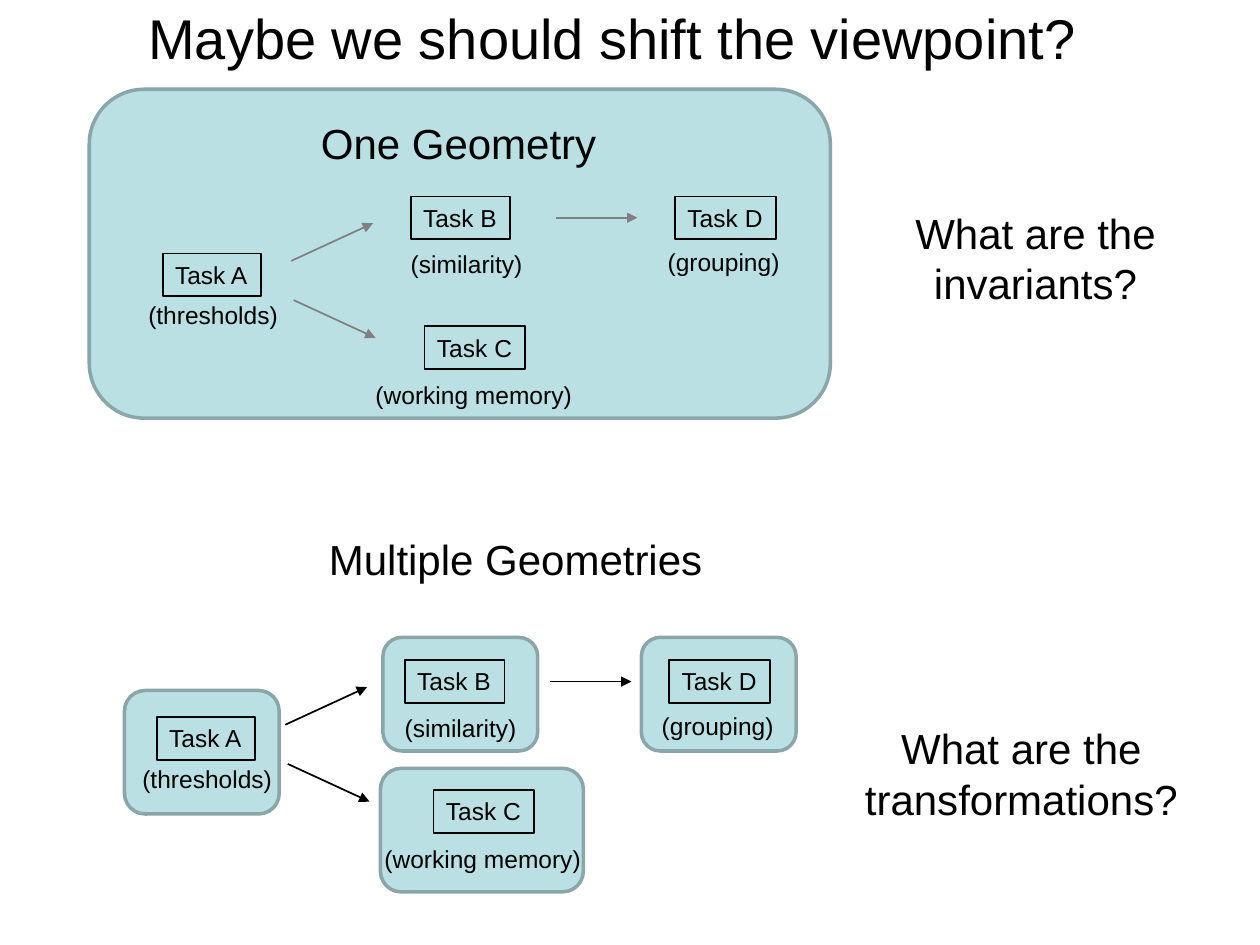
from dataclasses import dataclass

from lxml import etree
from pptx import Presentation
from pptx.dml.color import RGBColor
from pptx.enum.shapes import MSO_CONNECTOR, MSO_SHAPE
from pptx.enum.text import MSO_ANCHOR, MSO_AUTO_SIZE, PP_ALIGN
from pptx.oxml.ns import qn
from pptx.util import Cm, Pt

RECT = MSO_SHAPE.RECTANGLE
ROUND_RECT = MSO_SHAPE.ROUNDED_RECTANGLE
STRAIGHT = MSO_CONNECTOR.STRAIGHT
LEFT, CENTER = PP_ALIGN.LEFT, PP_ALIGN.CENTER
TOP, MIDDLE = MSO_ANCHOR.TOP, MSO_ANCHOR.MIDDLE
FIT_SHAPE, NO_FIT = MSO_AUTO_SIZE.SHAPE_TO_FIT_TEXT, MSO_AUTO_SIZE.NONE


@dataclass(frozen=True)
class Theme:
    font: str = "Arial"
    black: RGBColor = RGBColor(0x00, 0x00, 0x00)
    grey: RGBColor = RGBColor(0x80, 0x80, 0x80)
    panel: RGBColor = RGBColor(0xBB, 0xE0, 0xE3)
    panel_edge: RGBColor = RGBColor(0x8A, 0xA6, 0xA8)
    title: int = 32
    heading: int = 24
    label: int = 14


THEME = Theme()

# All lengths are in centimetres
LINE_H = 0.86
HEADING_H = 1.27

# Task: name, box left, top, width, note, note left, top, width
TASKS = [
    ("Task A", 3.28, 5.11, 1.98, "(thresholds)", 2.74, 5.92, 3.12),
    ("Task B", 8.28, 3.96, 2.01, "(similarity)", 8.03, 4.9, 2.77),
    ("Task C", 8.56, 6.58, 2.03, "(working memory)", 7.32, 7.54, 4.5),
    ("Task D", 13.61, 3.96, 2.03, "(grouping)", 13.21, 4.85, 2.77),
]
ARROWS = [
    (5.87, 5.26, 7.52, 4.5),
    (5.92, 6.05, 7.57, 6.81),
    (11.2, 4.39, 12.85, 4.39),
]
ONE_PANEL = (1.8, 1.8, 14.94, 6.63)
TASK_PANELS = [
    (12.93, 12.85, 3.12, 2.29),
    (7.72, 12.85, 3.12, 2.29),
    (2.51, 13.92, 3.12, 2.49),
    (7.67, 15.49, 4.09, 2.49),
]
# The lower diagram repeats the upper one; Task C moves a little further right
LOWER_DX, LOWER_DY = -0.12, 9.35
NUDGES = {"Task C": 0.3}


def write(sp, text, *, size, align=LEFT, anchor=TOP, wrap=False, fit=FIT_SHAPE):
    tf = sp.text_frame
    tf.word_wrap = wrap
    tf.auto_size = fit
    tf.vertical_anchor = anchor
    p = tf.paragraphs[0]
    p.alignment = align
    r = p.add_run()
    r.text = text
    r.font.name = THEME.font
    r.font.size = Pt(size)
    r.font.color.rgb = THEME.black


def add_text(shapes, text, x, y, w, h, **fmt):
    sp = shapes.add_textbox(Cm(x), Cm(y), Cm(w), Cm(h))
    write(sp, text, **fmt)


def add_box(shapes, kind, x, y, w, h, edge, width, fill=None):
    sp = shapes.add_shape(kind, Cm(x), Cm(y), Cm(w), Cm(h))
    sp.shadow.inherit = False
    if fill is None:
        sp.fill.background()
    else:
        sp.fill.solid()
        sp.fill.fore_color.rgb = fill
    sp.line.color.rgb = edge
    sp.line.width = Pt(width)
    return sp


def add_panel(shapes, x, y, w, h):
    add_box(shapes, ROUND_RECT, x, y, w, h, THEME.panel_edge, 2, THEME.panel)


def add_arrow(shapes, x1, y1, x2, y2, color):
    line = shapes.add_connector(STRAIGHT, Cm(x1), Cm(y1), Cm(x2), Cm(y2))
    line.line.color.rgb = color
    line.line.width = Pt(1)
    ln = line.line._get_or_add_ln()
    etree.SubElement(ln, qn("a:tailEnd"), type="triangle", w="med", len="med")
    etree.SubElement(line._element.spPr, qn("a:effectLst"))


def add_diagram(shapes, arrow_color, dx=0, dy=0, nudges=None):
    nudges = nudges or {}
    for name, x, y, w, note, note_x, note_y, note_w in TASKS:
        shift = dx + nudges.get(name, 0)
        sp = add_box(shapes, RECT, x + shift, y + dy, w, LINE_H, THEME.black, 1)
        write(sp, name, size=THEME.label)
        add_text(shapes, note, note_x + shift, note_y + dy, note_w, LINE_H,
                 size=THEME.label)
    for x1, y1, x2, y2 in ARROWS:
        add_arrow(shapes, x1 + dx, y1 + dy, x2 + dx, y2 + dy, arrow_color)


def add_title(slide, text):
    sp = slide.shapes.title
    sp.left, sp.top, sp.width, sp.height = Cm(1.55), Cm(-0.84), Cm(21.6), Cm(3.18)
    write(sp, text, size=THEME.title, align=CENTER, anchor=MIDDLE, wrap=True,
          fit=NO_FIT)


def add_question(shapes, text, x, y, w):
    add_text(shapes, text, x, y, w, 2.31, size=THEME.heading, align=CENTER,
             wrap=True)


def main():
    prs = Presentation()
    prs.slide_width, prs.slide_height = Cm(25.4), Cm(19.05)
    slide = prs.slides.add_slide(prs.slide_layouts[5])
    shapes = slide.shapes
    add_title(slide, "Maybe we should shift the viewpoint?")

    # Upper half: all tasks share one geometry
    add_panel(shapes, *ONE_PANEL)
    add_text(shapes, "One Geometry", 6.22, 2.24, 6.12, HEADING_H,
             size=THEME.heading)
    add_diagram(shapes, THEME.grey)
    add_question(shapes, "What are the invariants?", 17.7, 4.06, 6.35)

    # Lower half: each task has its own geometry
    group = shapes.add_group_shape().shapes
    add_text(group, "Multiple Geometries", 6.38, 10.64, 8.13, HEADING_H,
             size=THEME.heading)
    for panel in TASK_PANELS:
        add_panel(group, *panel)
    add_diagram(group, THEME.black, LOWER_DX, LOWER_DY, NUDGES)
    add_question(shapes, "What are the transformations?", 16.74, 14.45, 7.7)

    prs.save("out.pptx")


if __name__ == "__main__":
    main()
